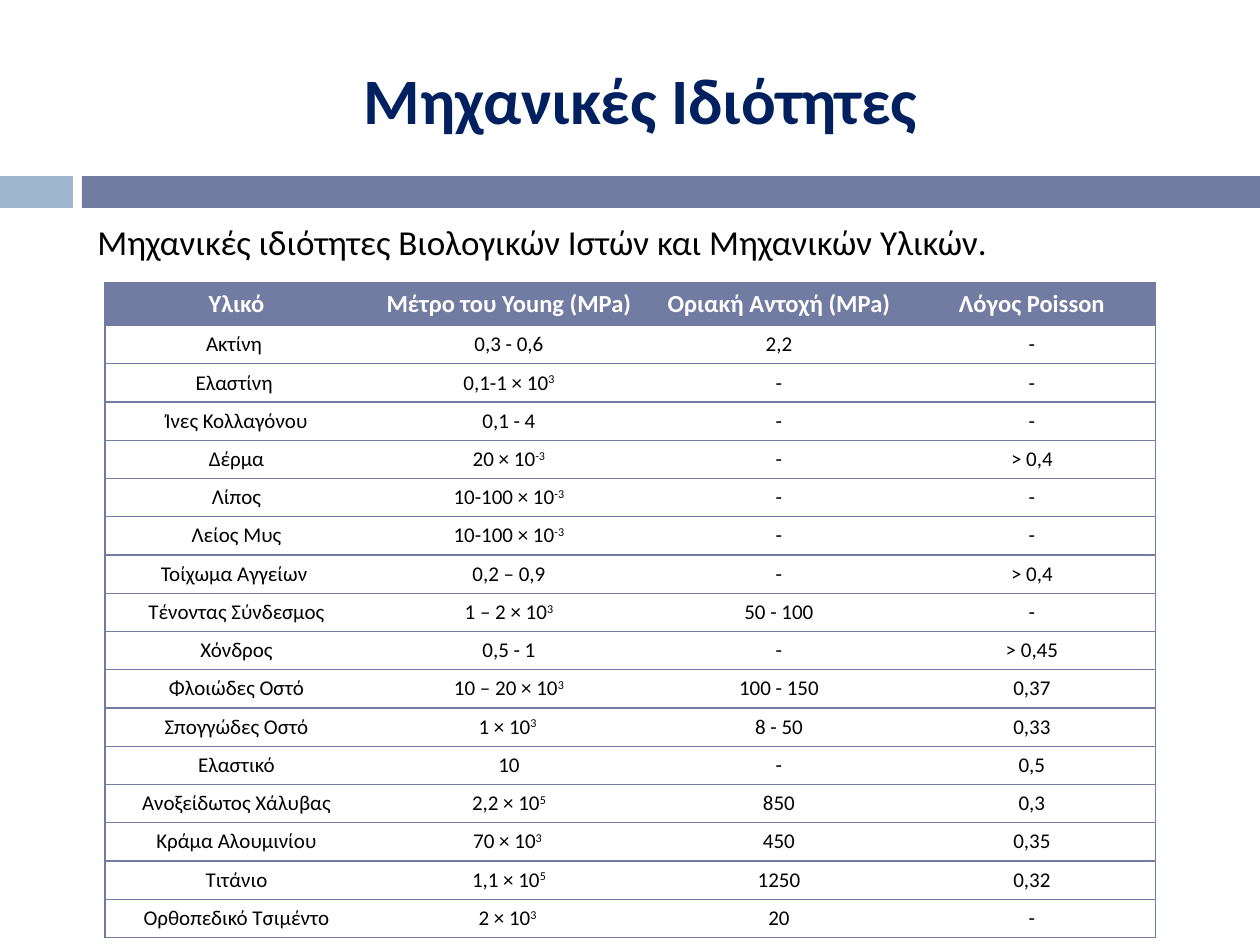
"""Build a slide with a table of mechanical properties of tissues and materials."""
from dataclasses import dataclass

from lxml import etree
from pptx import Presentation, util as u
from pptx.dml.color import RGBColor
from pptx.enum import shapes, text
from pptx.oxml import ns

SCALE = 914400 / 126
FONT = "Calibri"
COLORS = {"bar": "727CA3", "accent": "9FB8CD", "title": "002060",
          "body": "000000", "white": "FFFFFF"}
COLUMNS = [263, 282, 258, 248]
HEADER_HEIGHT, ROW_HEIGHT = 42, 35
ROWS = [
    ("Υλικό", "Μέτρο του Young (MPa)", "Οριακή Αντοχή (MPa)", "Λόγος Poisson"),
    ("Ακτίνη ", "0,3 - 0,6", "2,2", "-"),
    ("Ελαστίνη ", "0,1-1 × 10^3", "-", "-"),
    ("Ίνες Κολλαγόνου", "0,1 - 4", "-", "-"),
    ("Δέρμα", "20 × 10^-3", "-", "> 0,4"),
    ("Λίπος", "10-100 × 10^-3", "-", "-"),
    ("Λείος Μυς", "10-100 × 10^-3", "-", "-"),
    ("Τοίχωμα Αγγείων ", "0,2 – 0,9", "-", "> 0,4"),
    ("Τένοντας Σύνδεσμος", "1 – 2 × 10^3", "50 - 100", "-"),
    ("Χόνδρος", "0,5 - 1", "-", "> 0,45"),
    ("Φλοιώδες Οστό", "10 – 20 × 10^3", "100 - 150", "0,37"),
    ("Σπογγώδες Οστό", "1 × 10^3 ", "8 - 50", "0,33"),
    ("Ελαστικό", "10", "-", "0,5"),
    ("Ανοξείδωτος Χάλυβας", "2,2 × 10^5", "850", "0,3"),
    ("Κράμα Αλουμινίου", "70 × 10^3 ", "450", "0,35"),
    ("Τιτάνιο", "1,1 × 10^5", "1250", "0,32"),
    ("Ορθοπεδικό Τσιμέντο", "2 × 10^3 ", "20", "-"),
]


@dataclass(frozen=True)
class Box:
    left: int
    top: int
    width: int
    height: int

    def emu(self) -> list[int]:
        return [px(v) for v in (self.left, self.top, self.width, self.height)]


@dataclass(frozen=True)
class Bar:
    box: Box
    color: str


@dataclass(frozen=True)
class Style:
    size: int
    color: str
    bold: bool = False
    align: text.PP_ALIGN = text.PP_ALIGN.CENTER
    before: int = 0


BARS = [Bar(Box(0, 176, 73, 32), "accent"), Bar(Box(82, 176, 1178, 32), "bar")]
TITLE = Style(37, "title", True, before=7)
LEAD = Style(20, "body", align=text.PP_ALIGN.JUSTIFY, before=7)
HEADER = Style(14, "white", True)
CELL = Style(12, "body")


def px(value: int) -> int:
    return round(value * SCALE)


def rgb(name: str) -> RGBColor:
    return RGBColor.from_string(COLORS[name])


def write(tf, content: str, style: Style) -> None:
    p = tf.paragraphs[0]
    p.alignment = style.align
    p.space_before = u.Pt(style.before)
    formats = {"name": FONT, "size": u.Pt(style.size), "bold": style.bold}
    for i, part in enumerate(content.split("^")):
        r = p.add_run()
        r.text = part
        for key, value in formats.items():
            setattr(r.font, key, value)
        r.font.color.rgb = rgb(style.color)
        if i:
            r._r.get_or_add_rPr().set("baseline", "30000")


def set_frame(tf) -> None:
    formats = {"word_wrap": True, "auto_size": text.MSO_AUTO_SIZE.NONE,
               "vertical_anchor": text.MSO_ANCHOR.TOP}
    for key, value in formats.items():
        setattr(tf, key, value)


def add_bar(s, bar: Bar) -> None:
    sp = s.shapes.add_shape(shapes.MSO_SHAPE.RECTANGLE, *bar.box.emu())
    sp.shadow.inherit = False
    sp.fill.solid()
    sp.fill.fore_color.rgb = rgb(bar.color)
    sp.line.fill.background()


def set_borders(cell, sides: str) -> None:
    tc_pr = cell._tc.get_or_add_tcPr()
    for side in "LRTB":
        ln = etree.SubElement(tc_pr, ns.qn(f"a:ln{side}"), w=str(u.Pt(0.79)))
        if side in sides:
            fill = etree.SubElement(ln, ns.qn("a:solidFill"))
            etree.SubElement(fill, ns.qn("a:srgbClr"), val=COLORS["bar"])
        else:
            etree.SubElement(ln, ns.qn("a:noFill"))


def add_properties_table(s, left: int, top: int) -> None:
    height = HEADER_HEIGHT + ROW_HEIGHT * (len(ROWS) - 1)
    box = Box(left, top, sum(COLUMNS), height)
    table = s.shapes.add_table(len(ROWS), len(COLUMNS), *box.emu()).table
    table.horz_banding = False
    for column, width in zip(table.columns, COLUMNS):
        column.width = px(width)
    last = len(COLUMNS) - 1
    for i, values in enumerate(ROWS):
        table.rows[i].height = px(ROW_HEIGHT if i else HEADER_HEIGHT)
        for j, value in enumerate(values):
            cell = table.cell(i, j)
            set_borders(cell, "TB" + {0: "L", last: "R"}.get(j, ""))
            cell.fill.solid()
            cell.fill.fore_color.rgb = rgb("white" if i else "bar")
            cell.vertical_anchor = text.MSO_ANCHOR.MIDDLE
            write(cell.text_frame, value, CELL if i else HEADER)


def main() -> None:
    prs = Presentation()
    prs.slide_width, prs.slide_height = px(1260), px(945)
    s = prs.slides.add_slide(prs.slide_layouts[5])
    for bar in BARS:
        add_bar(s, bar)
    title = s.shapes.title
    title.left, title.top, title.width, title.height = Box(105, 53, 1071, 147).emu()
    set_frame(title.text_frame)
    write(title.text_frame, "Μηχανικές Ιδιότητες", TITLE)
    lead = s.shapes.add_textbox(*Box(85, 214, 1124, 620).emu())
    set_frame(lead.text_frame)
    write(lead.text_frame,
          "Μηχανικές ιδιότητες Βιολογικών Ιστών και Μηχανικών Υλικών.", LEAD)
    add_properties_table(s, 105, 283)
    prs.save("out.pptx")


if __name__ == "__main__":
    main()
